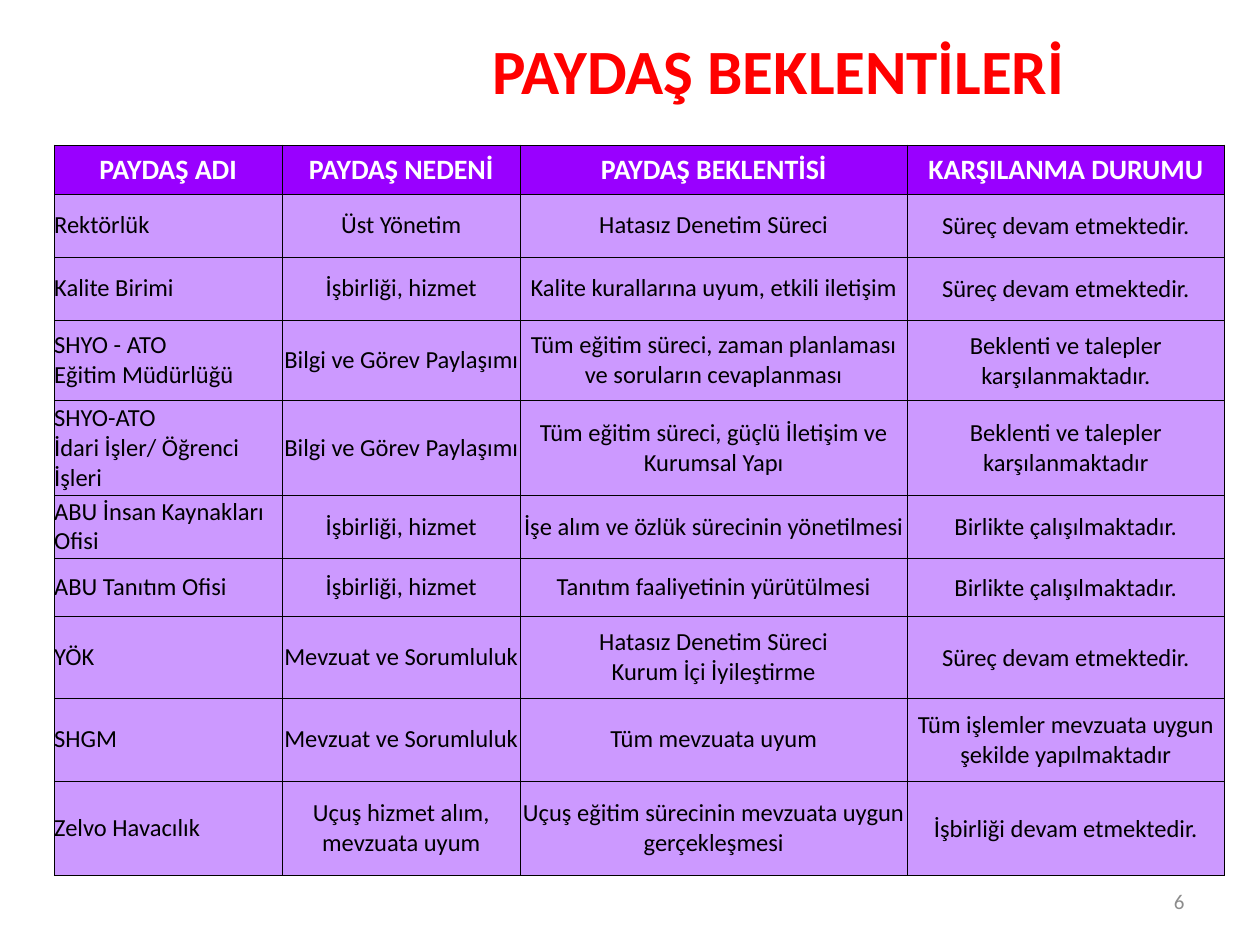
from lxml import etree
from pptx import Presentation
from pptx.dml.color import RGBColor
from pptx.enum.text import MSO_ANCHOR, PP_ALIGN
from pptx.oxml.ns import qn
from pptx.util import Inches, Pt

LEFT, CENTER, RIGHT = PP_ALIGN.LEFT, PP_ALIGN.CENTER, PP_ALIGN.RIGHT
TOP, MIDDLE = MSO_ANCHOR.TOP, MSO_ANCHOR.MIDDLE

FONT = "Calibri"
HEADER_FILL, BODY_FILL = "9900FF", "CC99FF"
COLUMN_WIDTHS = [1.81, 1.89, 3.07, 2.52]
ROW_HEIGHTS = [0.39, 0.5, 0.5, 0.64, 0.75, 0.5, 0.46, 0.65, 0.66, 0.75]

HEADERS = ["PAYDAŞ ADI", "PAYDAŞ NEDENİ", "PAYDAŞ BEKLENTİSİ", "KARŞILANMA DURUMU"]
STAKEHOLDERS = [
    ["Rektörlük", "Üst Yönetim", "Hatasız Denetim Süreci", "Süreç devam etmektedir."],
    ["Kalite Birimi", "İşbirliği, hizmet",
     "Kalite kurallarına uyum, etkili iletişim", "Süreç devam etmektedir."],
    ["SHYO - ATO\nEğitim Müdürlüğü", "Bilgi ve Görev Paylaşımı",
     "Tüm eğitim süreci, zaman planlaması ve soruların cevaplanması",
     "Beklenti ve talepler karşılanmaktadır."],
    ["SHYO-ATO\nİdari İşler/ Öğrenci İşleri", "Bilgi ve Görev Paylaşımı",
     "Tüm eğitim süreci, güçlü İletişim ve Kurumsal Yapı",
     "Beklenti ve talepler karşılanmaktadır"],
    ["ABU İnsan Kaynakları Ofisi", "İşbirliği, hizmet",
     "İşe alım ve özlük sürecinin yönetilmesi", "Birlikte çalışılmaktadır."],
    ["ABU Tanıtım Ofisi", "İşbirliği, hizmet",
     "Tanıtım faaliyetinin yürütülmesi", "Birlikte çalışılmaktadır."],
    ["YÖK", "Mevzuat ve Sorumluluk",
     "Hatasız Denetim Süreci\nKurum İçi İyileştirme", "Süreç devam etmektedir."],
    ["SHGM", "Mevzuat ve Sorumluluk", "Tüm mevzuata uyum",
     "Tüm işlemler mevzuata uygun şekilde yapılmaktadır"],
    ["Zelvo Havacılık", "Uçuş hizmet alım, mevzuata uyum",
     "Uçuş eğitim sürecinin mevzuata uygun gerçekleşmesi",
     "İşbirliği devam etmektedir."],
]


def color(hex_code):
    return RGBColor.from_string(hex_code)


def write(frame, text, size, hex_code, align, bold=False):
    paragraph = frame.paragraphs[0]
    paragraph.text = text
    paragraph.alignment = align
    font = paragraph.font
    font.name, font.size, font.bold = FONT, Pt(size), bold
    font.color.rgb = color(hex_code)


def add_text(slide, box, text, size, hex_code, align, anchor, bold=False):
    frame = slide.shapes.add_textbox(*map(Inches, box)).text_frame
    frame.word_wrap = True
    frame.vertical_anchor = anchor
    write(frame, text, size, hex_code, align, bold)


def add_borders(cell, hex_code, width):
    properties = cell._tc.get_or_add_tcPr()
    for side in ("lnL", "lnR", "lnT", "lnB"):
        line = etree.SubElement(properties, qn(f"a:{side}"), w=str(Pt(width)))
        fill = etree.SubElement(line, qn("a:solidFill"))
        etree.SubElement(fill, qn("a:srgbClr"), val=hex_code)


def style_cell(cell, fill, inset):
    add_borders(cell, "000000", 0.5)
    cell.fill.solid()
    cell.fill.fore_color.rgb = color(fill)
    cell.vertical_anchor = MIDDLE
    cell.margin_left = cell.margin_right = cell.margin_top = Inches(inset)
    cell.margin_bottom = 0


def add_stakeholder_table(slide):
    rows = [HEADERS] + STAKEHOLDERS
    table = slide.shapes.add_table(
        len(rows), len(HEADERS), Inches(0.43), Inches(1.15),
        Inches(sum(COLUMN_WIDTHS)), Inches(sum(ROW_HEIGHTS))).table
    for column, width in zip(table.columns, COLUMN_WIDTHS):
        column.width = Inches(width)
    for row, height in zip(table.rows, ROW_HEIGHTS):
        row.height = Inches(height)
    status_column = len(HEADERS) - 1
    for r, texts in enumerate(rows):
        for c, text in enumerate(texts):
            cell = table.cell(r, c)
            is_header = r == 0
            inset = 0.01 if is_header or c == status_column else 0
            style_cell(cell, HEADER_FILL if is_header else BODY_FILL, inset)
            if is_header:
                write(cell.text_frame, text, 16, "FFFFFF", CENTER, bold=True)
            else:
                write(cell.text_frame, text, 14, "000000", CENTER if c else LEFT)


def main():
    deck = Presentation()
    deck.slide_width, deck.slide_height = Inches(10), Inches(7.5)
    slide = deck.slides.add_slide(deck.slide_layouts[6])
    add_text(slide, (7.17, 6.95, 2.33, 0.4), "6", 12, "8C8C8C", RIGHT, MIDDLE)
    add_stakeholder_table(slide)
    add_text(slide, (2.36, 0.2, 7.64, 0.71), "PAYDAŞ BEKLENTİLERİ",
             36, "FF0000", CENTER, TOP, bold=True)
    deck.save("out.pptx")


if __name__ == "__main__":
    main()
